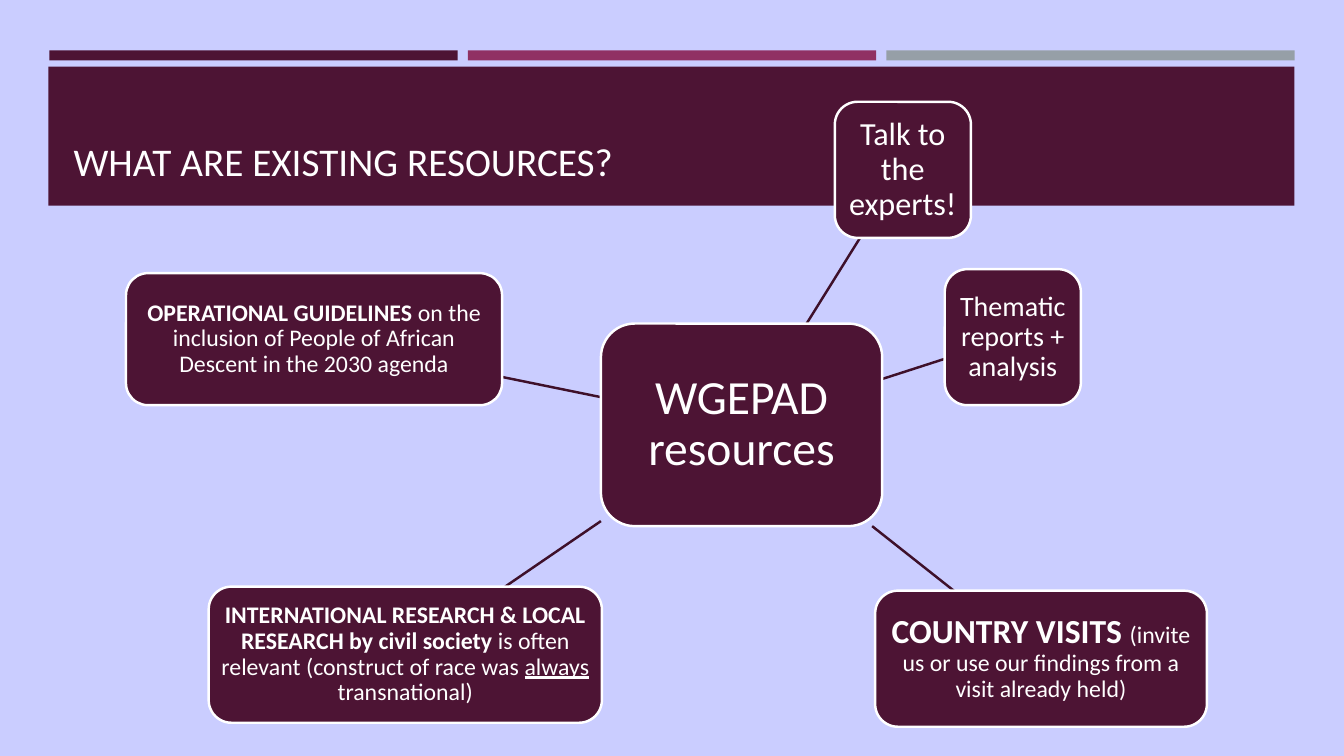
import pptx
import pptx.util
import pptx.dml.color
import pptx.enum.shapes
import pptx.enum.text
import pptx.oxml
from pptx.util import Inches

WINE = "4D1434"
WHITE = "FFFFFF"
SHAPES = pptx.enum.shapes.MSO_SHAPE
ANCHOR = pptx.enum.text.MSO_ANCHOR
ALIGN = pptx.enum.text.PP_ALIGN


def color(hex_string):
    return pptx.dml.color.RGBColor.from_string(hex_string)


def add_filled_shape(kind, left, top, width, height, fill):
    shape = slide.shapes.add_shape(
        kind, Inches(left), Inches(top), Inches(width), Inches(height))
    shape.shadow.inherit = False
    shape.fill.solid()
    shape.fill.fore_color.rgb = color(fill)
    shape.line.fill.background()
    return shape


presentation = pptx.Presentation()
presentation.slide_width = Inches(13.33)
presentation.slide_height = Inches(7.5)
slide = presentation.slides.add_slide(presentation.slide_layouts[5])
slide.background.fill.solid()
slide.background.fill.fore_color.rgb = color("CACDFF")

# Accent bars and title band
for index, fill in enumerate([WINE, "903163", "969FA7"]):
    add_filled_shape(SHAPES.RECTANGLE, 0.49 + 4.15 * index, 0.5, 4.05, 0.1, fill)
add_filled_shape(SHAPES.RECTANGLE, 0.48, 0.66, 12.36, 1.38, WINE)

# Spokes from the centre to each resource
spokes = [
    (8, 3.21, 8.53, 2.36),
    (8.75, 3.76, 9.37, 3.56),
    (8.65, 5.22, 9.46, 5.86),
    (5.96, 5.17, 5.01, 5.82),
    (5.96, 3.94, 4.98, 3.74),
]
for ends in spokes:
    spoke = slide.shapes.add_connector(
        pptx.enum.shapes.MSO_CONNECTOR.STRAIGHT, *map(Inches, ends))
    spoke.line.color.rgb = color("3E102A")
    spoke.line.width = pptx.util.Pt(1.75)
    spoke.element.spPr.append(pptx.oxml.parse_xml(
        '<a:effectLst xmlns:a="http://schemas.openxmlformats.org/drawingml/2006/main"/>'))

# Resource boxes: position, inset, runs of (text, size, bold, underline)
boxes = [
    ((5.96, 3.21, 2.79, 2.01), 0.09, [("WGEPAD resources", 34, False, False)]),
    ((8.28, 1.01, 1.35, 1.35), 0.06, [("Talk to the experts!", 23, False, False)]),
    ((9.37, 2.67, 1.35, 1.35), 0.06, [("Thematic reports + analysis", 20, False, False)]),
    ((8.68, 5.86, 3.29, 1.35), 0.07, [
        ("COUNTRY VISITS ", 24, True, False),
        ("(invite us or use our findings from a visit already held)", 17, False, False)]),
    ((2.07, 5.82, 3.9, 1.35), 0.05, [
        ("INTERNATIONAL RESEARCH & LOCAL RESEARCH by civil society ", 17, True, False),
        ("is often relevant (construct of race was ", 17, False, False),
        ("always", 17, False, True),
        (" transnational)", 17, False, False)]),
    ((1.25, 2.71, 3.73, 1.31), 0.05, [
        ("OPERATIONAL GUIDELINES ", 17, True, False),
        ("on the inclusion of People of African Descent in the 2030 agenda",
         17, False, False)]),
]
for position, inset, runs in boxes:
    box = add_filled_shape(SHAPES.ROUNDED_RECTANGLE, *position, WINE)
    box.line.color.rgb = color(WHITE)
    box.line.width = pptx.util.Pt(1.75)
    frame = box.text_frame
    frame.word_wrap = True
    frame.vertical_anchor = ANCHOR.MIDDLE
    frame.margin_left = frame.margin_right = Inches(inset)
    frame.margin_top = frame.margin_bottom = Inches(inset)
    paragraph = frame.paragraphs[0]
    paragraph.alignment = ALIGN.CENTER
    paragraph.line_spacing = 0.9
    paragraph.font.name = "Calibri"
    paragraph.font.color.rgb = color(WHITE)
    for text, size, bold, underline in runs:
        run = paragraph.add_run()
        run.text = text
        run.font.size = pptx.util.Pt(size)
        run.font.bold = bold
        run.font.underline = underline
        run.font.name = "Calibri"
        run.font.color.rgb = color(WHITE)

# Title, brought in front of its band
title = slide.shapes.title
title.left, title.top = Inches(0.63), Inches(0.8)
title.width, title.height = Inches(12.06), Inches(1.08)
title.text_frame.text = "WHAT ARE EXISTING RESOURCES?"
title.text_frame.word_wrap = True
title.text_frame.vertical_anchor = ANCHOR.BOTTOM
paragraph = title.text_frame.paragraphs[0]
paragraph.alignment = ALIGN.LEFT
paragraph.font.name = "Calibri"
paragraph.font.size = pptx.util.Pt(28)
paragraph.font.color.rgb = color(WHITE)
title.element.getparent().append(title.element)

presentation.save("out.pptx")
